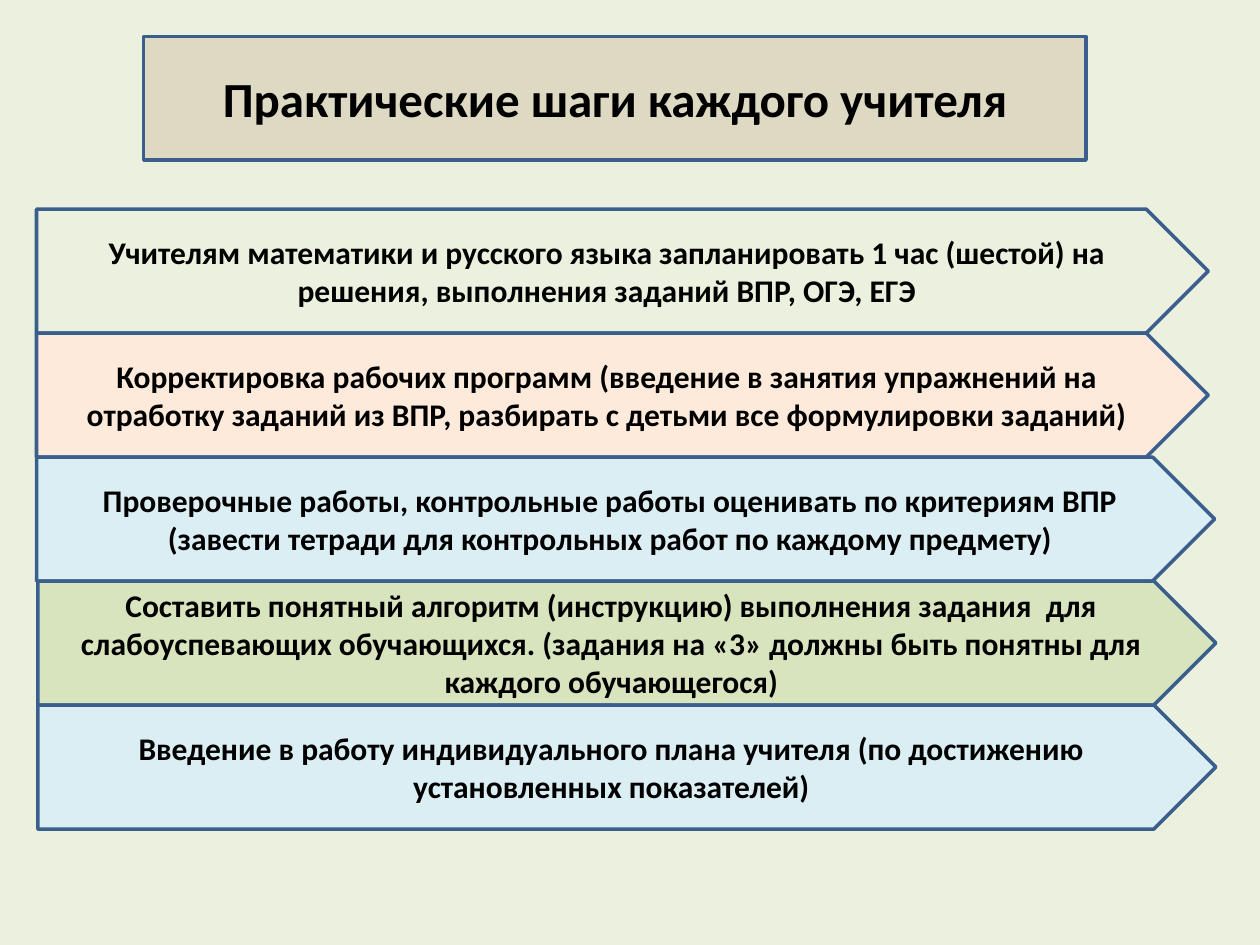
from dataclasses import dataclass

from pptx import Presentation
from pptx.dml.color import RGBColor
from pptx.enum.shapes import MSO_SHAPE
from pptx.enum.text import MSO_ANCHOR, PP_ALIGN
from pptx.util import Inches, Pt

RECTANGLE, PENTAGON = MSO_SHAPE.RECTANGLE, MSO_SHAPE.PENTAGON
MIDDLE, CENTER = MSO_ANCHOR.MIDDLE, PP_ALIGN.CENTER

WIDTH, HEIGHT = Inches(10), Inches(7.5)
COLUMNS, ROWS = 100, 75


@dataclass(frozen=True)
class Theme:
    font: str = "Calibri"
    title_size: int = 28
    step_size: int = 18
    line_width: int = 2
    ink: str = "000000"
    outline: str = "3A5F8C"
    page: str = "EBF1DE"
    sand: str = "DDD9C3"
    peach: str = "FDEADA"
    blue: str = "DBEEF4"
    green: str = "D7E4BD"


def write_text(frame, text, *, font, size, color, bold=True):
    frame.word_wrap = True
    frame.vertical_anchor = MIDDLE
    para = frame.paragraphs[0]
    para.alignment = CENTER
    span = para.add_run()
    span.text = text
    span.font.name = font
    span.font.size = Pt(size)
    span.font.bold = bold
    span.font.color.rgb = RGBColor.from_string(color)


class Page:
    """A slide on a grid of COLUMNS by ROWS, with its theme."""

    def __init__(self, deck, theme):
        self.theme = theme
        self.slide = deck.slides.add_slide(deck.slide_layouts[6])
        background = self.slide.background.fill
        background.solid()
        background.fore_color.rgb = RGBColor.from_string(theme.page)

    def panel(self, kind, column, row, columns, rows, fill, text, size):
        box = self.slide.shapes.add_shape(
            kind,
            round(WIDTH * column / COLUMNS), round(HEIGHT * row / ROWS),
            round(WIDTH * columns / COLUMNS), round(HEIGHT * rows / ROWS))
        box.shadow.inherit = False
        box.fill.solid()
        box.fill.fore_color.rgb = RGBColor.from_string(fill)
        box.line.color.rgb = RGBColor.from_string(self.theme.outline)
        box.line.width = Pt(self.theme.line_width)
        write_text(box.text_frame, text, font=self.theme.font, size=size,
                   color=self.theme.ink)

    def title(self, text):
        self.panel(RECTANGLE, 11.4, 2.9, 74.8, 9.8, self.theme.sand, text,
                   self.theme.title_size)

    def steps(self, items, top=16.6, height=9.84):
        """Stack arrows downwards; each item is column, width, fill and text."""
        for index, (column, columns, fill, text) in enumerate(items):
            self.panel(PENTAGON, column, top + index * height, columns, height,
                       fill, text, self.theme.step_size)


def main():
    deck = Presentation()
    deck.slide_width, deck.slide_height = WIDTH, HEIGHT
    theme = Theme()
    page = Page(deck, theme)
    page.title("Практические шаги каждого учителя")
    page.steps([
        (2.9, 93, theme.page,
         "Учителям математики и русского языка запланировать 1 час (шестой) "
         "на решения, выполнения заданий ВПР, ОГЭ, ЕГЭ"),
        (2.9, 93, theme.peach,
         "Корректировка рабочих программ (введение в занятия упражнений на "
         "отработку заданий из ВПР, разбирать с детьми все формулировки "
         "заданий)"),
        (2.9, 93.5, theme.blue,
         "Проверочные работы, контрольные работы оценивать по критериям ВПР "
         "(завести тетради для контрольных работ по каждому предмету)"),
        (3, 93.5, theme.green,
         "Составить понятный алгоритм (инструкцию) выполнения задания  для "
         "слабоуспевающих обучающихся. (задания на «3» должны быть понятны "
         "для каждого обучающегося)"),
        (3, 93.5, theme.blue,
         "Введение в работу индивидуального плана учителя (по достижению "
         "установленных показателей)"),
    ])
    deck.save("out.pptx")


if __name__ == "__main__":
    main()
